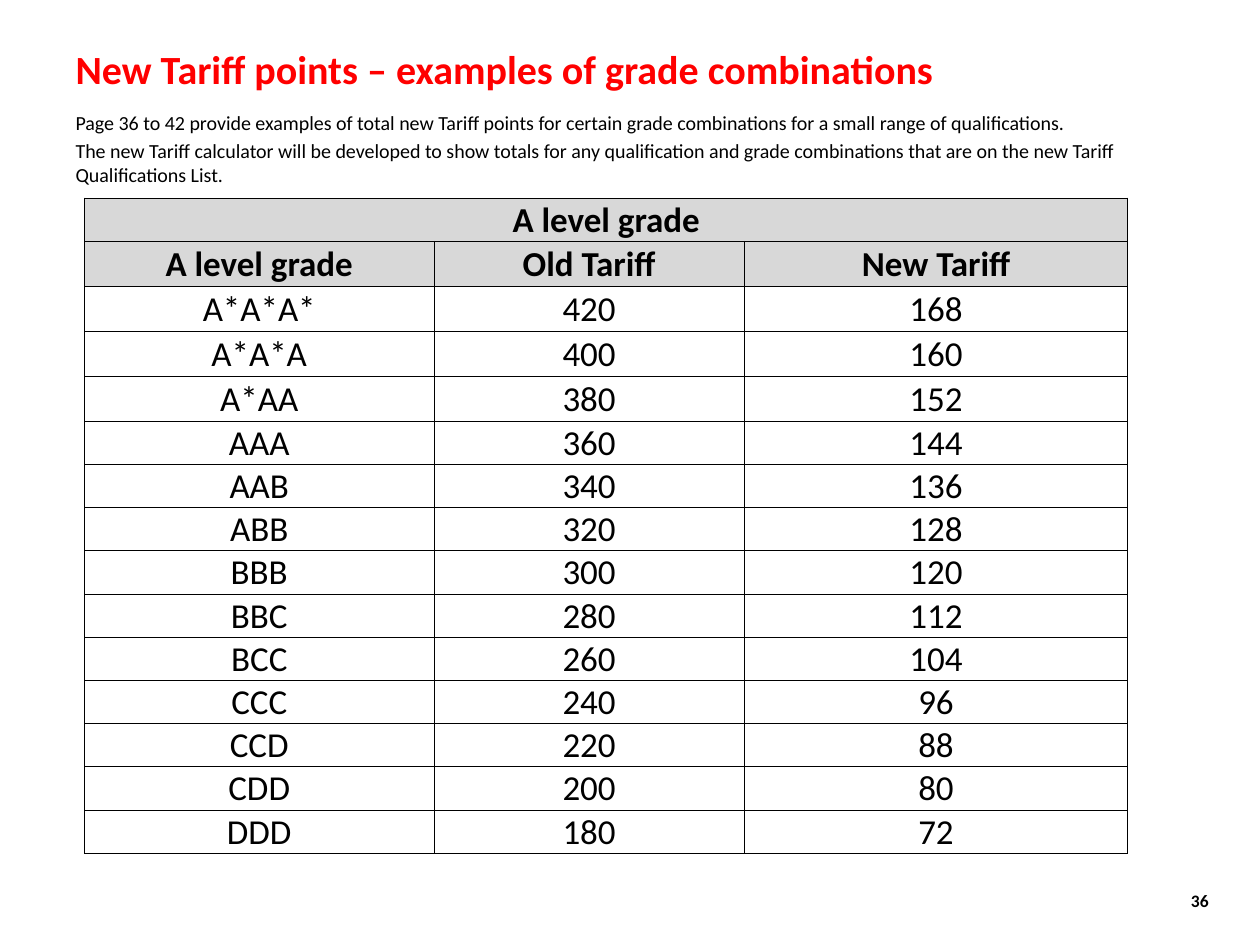
"""Build the slide that compares old and new Tariff points for A level grades."""
import pptx
import pptx.dml.color
import pptx.enum.text
import pptx.oxml
import pptx.oxml.ns
import pptx.util

Inches = pptx.util.Inches
Pt = pptx.util.Pt
ALIGN = pptx.enum.text.PP_ALIGN
ANCHOR = pptx.enum.text.MSO_ANCHOR

INTRO = [
    "Page 36 to 42 provide examples of total new Tariff points for certain grade "
    "combinations for a small range of qualifications.",
    "The new Tariff calculator will be developed to show totals for any qualification "
    "and grade combinations that are on the new Tariff Qualifications List.",
]
HEADERS = [
    ("A level grade", "", ""),
    ("A level grade", "Old Tariff", "New Tariff"),
]
POINTS = [
    ("A*A*A*", 420, 168),
    ("A*A*A", 400, 160),
    ("A*AA", 380, 152),
    ("AAA", 360, 144),
    ("AAB", 340, 136),
    ("ABB", 320, 128),
    ("BBB", 300, 120),
    ("BBC", 280, 112),
    ("BCC", 260, 104),
    ("CCC", 240, 96),
    ("CCD", 220, 88),
    ("CDD", 200, 80),
    ("DDD", 180, 72),
]
COLUMN_WIDTHS = [3.88, 3.45, 4.26]
ROW_HEIGHTS = [0.48] + [0.5] * 4 + [0.48] * 10


def rgb(value):
    return pptx.dml.color.RGBColor.from_string(value)


class SlideBuilder:
    font = "Calibri"
    ink = "000000"
    accent = "FF0000"
    header_fill = "D8D8D8"
    border_width = 0.5

    def __init__(self, slide):
        self.slide = slide

    def run(self, p, text, size, color, bold):
        r = p.add_run()
        r.text = text
        r.font.name = self.font
        r.font.size = Pt(size)
        r.font.bold = bold
        r.font.color.rgb = rgb(color)

    def margins(self, target, left, top, right, bottom):
        target.margin_left, target.margin_right = Inches(left), Inches(right)
        target.margin_top, target.margin_bottom = Inches(top), Inches(bottom)

    def text(self, box, paragraphs, size, color=ink, bold=False,
             align=ALIGN.LEFT, anchor=ANCHOR.TOP):
        tf = self.slide.shapes.add_textbox(*map(Inches, box)).text_frame
        tf.word_wrap = True
        tf.vertical_anchor = anchor
        self.margins(tf, 0.14, 0.07, 0.14, 0.07)
        for i, text in enumerate(paragraphs):
            p = tf.paragraphs[0] if i == 0 else tf.add_paragraph()
            p.alignment = align
            if i:
                p.space_before = Pt(size * 0.2)
            self.run(p, text, size, color, bold)

    def borders(self, cell):
        tc_pr = cell._tc.get_or_add_tcPr()
        for side in ("lnL", "lnR", "lnT", "lnB"):
            tc_pr.append(pptx.oxml.parse_xml(
                f'<a:{side} {pptx.oxml.ns.nsdecls("a")} w="{Pt(self.border_width)}">'
                f'<a:solidFill><a:srgbClr val="{self.ink}"/></a:solidFill></a:{side}>'))

    def cell(self, cell, text, header, anchor):
        self.margins(cell, 0.01, 0.01, 0.01, 0)
        cell.vertical_anchor = anchor
        self.borders(cell)
        if header:
            cell.fill.solid()
            cell.fill.fore_color.rgb = rgb(self.header_fill)
        else:
            cell.fill.background()
        if text:
            p = cell.text_frame.paragraphs[0]
            p.alignment = ALIGN.CENTER
            self.run(p, text, 28, self.ink, header)

    def table(self, left, top, headers, body, widths, heights):
        rows = headers + body
        table = self.slide.shapes.add_table(
            len(rows), len(widths), Inches(left), Inches(top),
            Inches(sum(widths)), Inches(sum(heights))).table
        table.first_row = table.horz_banding = False
        for column, width in zip(table.columns, widths):
            column.width = Inches(width)
        for row, height in zip(table.rows, heights):
            row.height = Inches(height)
        for i, values in enumerate(rows):
            for j, value in enumerate(values):
                if 1 <= i <= 4:
                    anchor = ANCHOR.MIDDLE
                elif i and j == 0:
                    anchor = ANCHOR.TOP
                else:
                    anchor = ANCHOR.BOTTOM
                self.cell(table.cell(i, j), str(value), i < len(headers), anchor)
        table.cell(0, 0).merge(table.cell(0, len(widths) - 1))


def main():
    prs = pptx.Presentation()
    prs.slide_width, prs.slide_height = Inches(14), Inches(10.5)
    s = SlideBuilder(prs.slides.add_slide(prs.slide_layouts[6]))
    s.text((0.7, 0.42, 12.6, 0.74), ["New Tariff points – examples of grade combinations"],
           32, s.accent, bold=True)
    s.text((0.7, 1.16, 12.6, 1.04), INTRO, 16)
    s.text((12.73, 9.73, 0.84, 0.56), ["36"], 14, bold=True,
           align=ALIGN.RIGHT, anchor=ANCHOR.MIDDLE)
    s.table(0.94, 2.2, HEADERS, POINTS, COLUMN_WIDTHS, ROW_HEIGHTS)
    prs.save("out.pptx")


if __name__ == "__main__":
    main()
